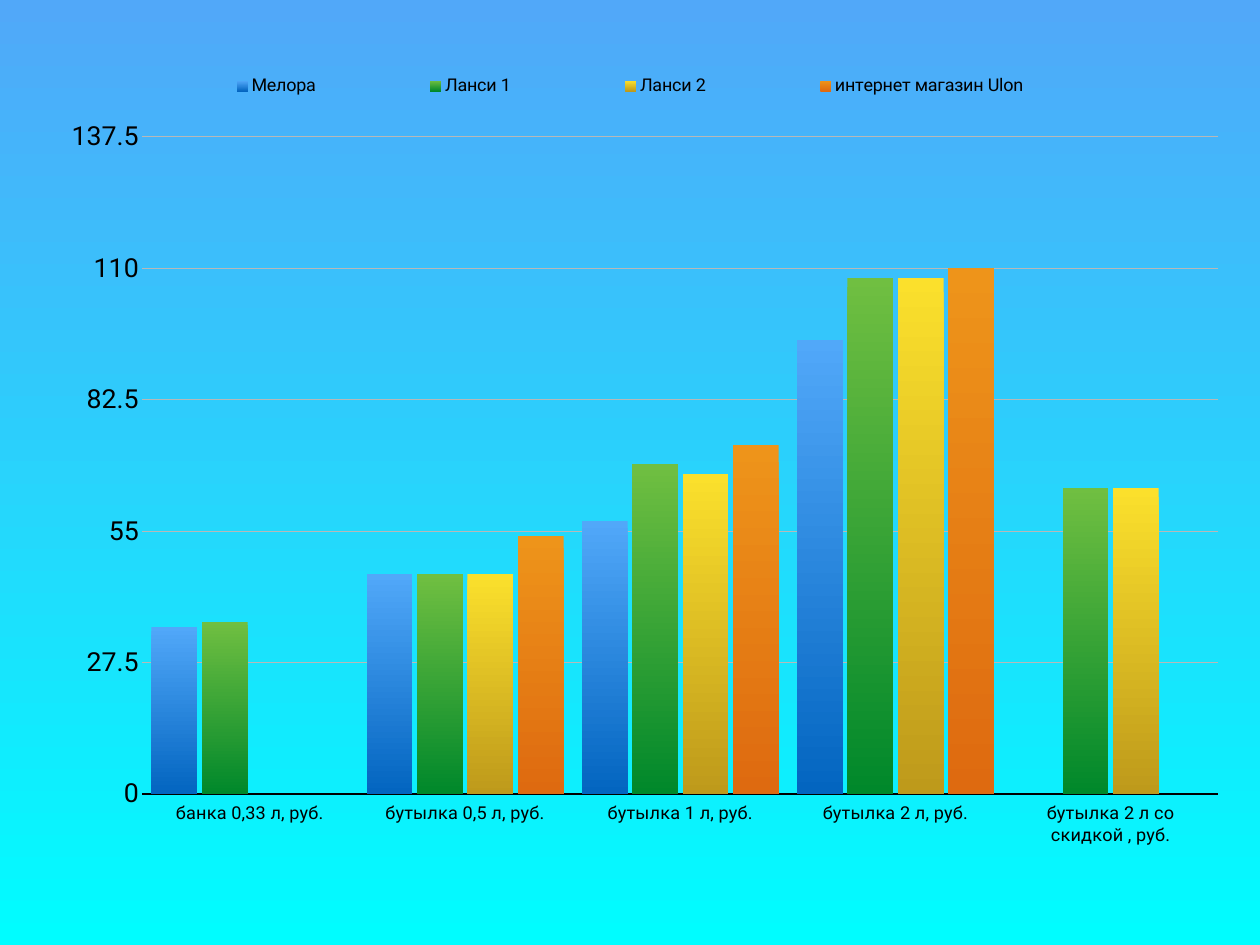
from lxml.etree import fromstring
from pptx import Presentation
from pptx.chart.data import CategoryChartData
from pptx.dml.color import RGBColor
from pptx.enum.chart import (XL_CHART_TYPE, XL_LEGEND_POSITION, XL_TICK_LABEL_POSITION,
                             XL_TICK_MARK)
from pptx.util import Emu, Pt

# Content
SHOP_PRICES = [
    ("Мелора", (35, 46, 57, 95, None), ("51A8F9", "0365C0")),
    ("Ланси 1", (36, 46, 69, 108, 64), ("70BF41", "00882B")),
    ("Ланси 2", (None, 46, 67, 108, 64), ("FBE02C", "BE9A1B")),
    ("интернет магазин Ulon", (None, 54, 73, 110, None), ("EE941A", "DE6A10")),
]
PACKAGES = ["банка 0,33 л, руб.", "бутылка 0,5 л, руб.", "бутылка 1 л, руб.",
            "бутылка 2 л, руб.", "бутылка 2 л со скидкой , руб."]
BACKGROUND = ("51A8F9", "00FDFF")

# Places in px, and shares of the chart frame
PAGE_SIZE = (1260, 945)
CHART_FRAME = (70, 67, 1167, 779)
PLOT_AREA = (0.062, 0.091, 0.922, 0.86)
LEGEND_AREA = (0.05, 0, 0.86, 0.05)
FONT = "Roboto"
CHART_NS = "http://schemas.openxmlformats.org/drawingml/2006/chart"


def px(length):
    return Emu(round(length * 914400 / 88.6))


def color(value):
    return RGBColor.from_string(value)


def fill_down(fill, colors):
    fill.gradient()
    fill.gradient_angle = 270
    for stop, value in zip(fill.gradient_stops, colors):
        stop.color.rgb = color(value)


def set_font(font, size):
    for name, value in {"name": FONT, "size": Pt(size), "bold": False}.items():
        setattr(font, name, value)
    font.color.rgb = color("000000")


def set_layout(element, index, area, inner=False):
    for old in element.findall(f"{{{CHART_NS}}}layout"):
        element.remove(old)
    target = '<c:layoutTarget val="inner"/>' if inner else ""
    modes = '<c:xMode val="edge"/><c:yMode val="edge"/>'
    sides = "".join(f'<c:{side} val="{share}"/>' for side, share in zip("xywh", area))
    element.insert(index, fromstring(
        f'<c:layout xmlns:c="{CHART_NS}"><c:manualLayout>{target}{modes}{sides}'
        "</c:manualLayout></c:layout>"))


# Page
deck = Presentation()
deck.slide_width, deck.slide_height = map(px, PAGE_SIZE)
page = deck.slides.add_slide(deck.slide_layouts[6])
fill_down(page.background.fill, BACKGROUND)

# Chart
data = CategoryChartData()
data.categories = PACKAGES
for shop, prices, _ in SHOP_PRICES:
    data.add_series(shop, prices)
chart = page.shapes.add_chart(
    XL_CHART_TYPE.COLUMN_CLUSTERED, *map(px, CHART_FRAME), data).chart
chart.has_title = False
set_font(chart.font, 10)
set_layout(chart._chartSpace.chart.plotArea, 0, PLOT_AREA, inner=True)

# Columns
plot = chart.plots[0]
for name, value in {"gap_width": 40, "overlap": -10, "vary_by_categories": False}.items():
    setattr(plot, name, value)
for series, (_, _, colors) in zip(plot.series, SHOP_PRICES):
    series.invert_if_negative = False
    fill_down(series.format.fill, colors)

# Axes
packages_axis, price_axis = chart.category_axis, chart.value_axis
for axis, size in ((packages_axis, 14.7), (price_axis, 21.7)):
    axis.major_tick_mark = axis.minor_tick_mark = XL_TICK_MARK.NONE
    set_font(axis.tick_labels.font, size)
    axis.tick_labels.number_format = "General"
    axis.tick_labels.number_format_is_linked = False
packages_axis.tick_label_position = XL_TICK_LABEL_POSITION.LOW
for name, value in {"minimum_scale": 0, "maximum_scale": 137.5, "major_unit": 27.5}.items():
    setattr(price_axis, name, value)
price_axis.format.line.fill.background()
for line, value, width in ((packages_axis.format.line, "000000", 1),
                           (price_axis.major_gridlines.format.line, "B8B8B8", 0.25)):
    line.color.rgb = color(value)
    line.width = Pt(width)

# Legend
chart.has_legend = True
legend = chart.legend
legend.position = XL_LEGEND_POSITION.TOP
legend.include_in_layout = True
set_font(legend.font, 14.6)
set_layout(legend._element, 1, LEGEND_AREA)

deck.save("out.pptx")
